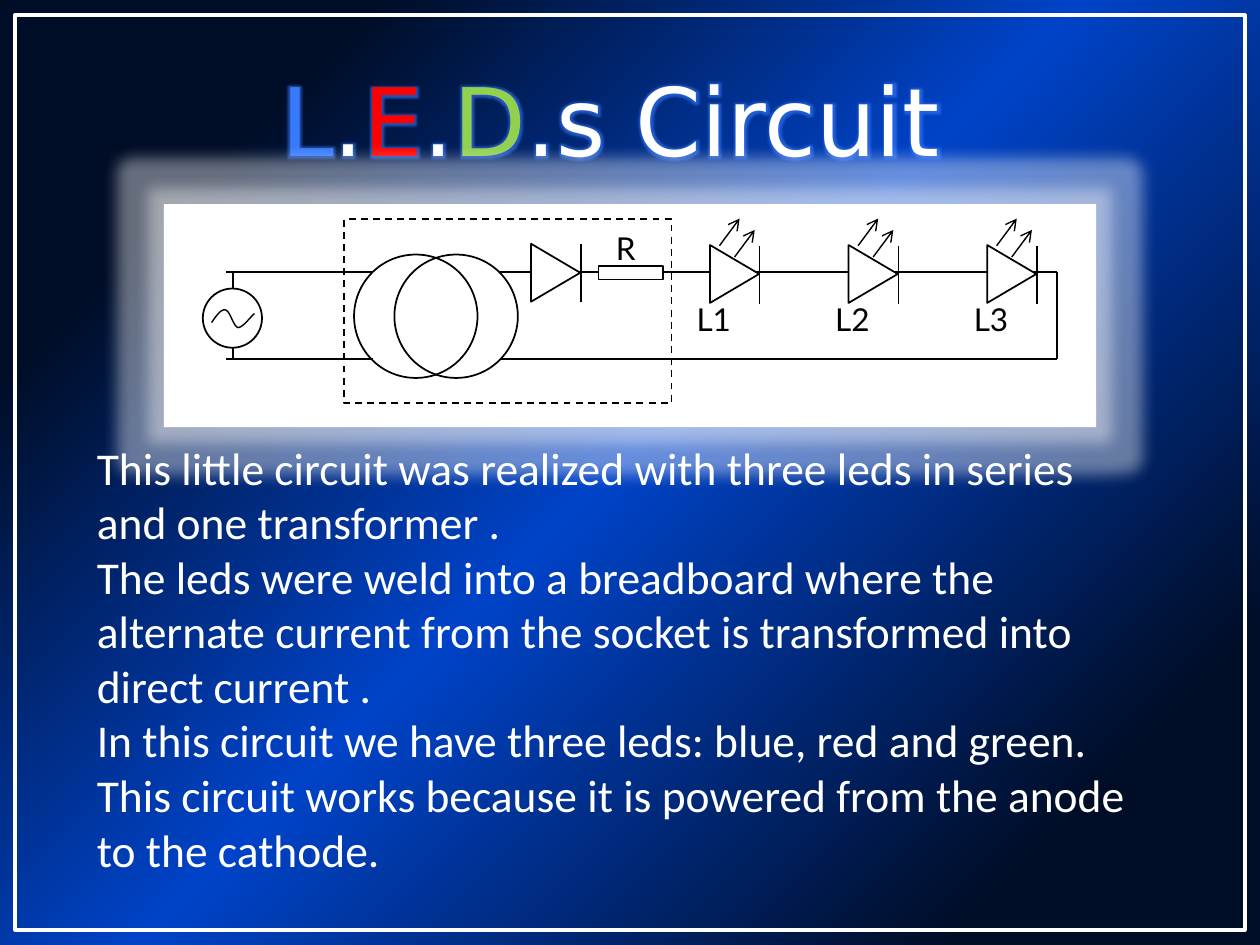
from lxml.etree import SubElement
from pptx import Presentation
from pptx.dml.color import RGBColor
from pptx.enum.dml import MSO_LINE
from pptx.enum.shapes import MSO_CONNECTOR, MSO_SHAPE
from pptx.enum.text import MSO_ANCHOR, MSO_AUTO_SIZE, PP_ALIGN
from pptx.oxml.ns import qn
from pptx.util import Inches, Pt

W, H = 10, 7.5
COLORS = {"white": "FFFFFF", "black": "000000", "blue": "377AFF", "red": "FF0000",
          "green": "92D050", "glow": "0A4DDB", "night": "000D26", "royal": "0043C8"}
THIN, MEDIUM = 0.8, 1


def rgb(name):
    return RGBColor.from_string(COLORS[name])


def add_color(parent, name, alpha=None):
    clr = SubElement(parent, qn("a:srgbClr"), val=COLORS[name])
    if alpha:
        SubElement(clr, qn("a:alpha"), val=str(alpha * 1000))


def add_glow(parent, name, radius, alpha):
    effects = parent.find(qn("a:effectLst"))
    if effects is None:
        effects = SubElement(parent, qn("a:effectLst"))
    add_color(SubElement(effects, qn("a:glow"), rad=str(Pt(radius))), name, alpha)
    return effects


def set_background(slide, stops, angle):
    fill = slide.background.fill
    fill.gradient()
    fill.gradient_angle = 360 - angle
    gs_lst = slide.element.find(".//" + qn("a:gsLst"))
    for gs in list(gs_lst):
        gs_lst.remove(gs)
    for pos, name in stops:
        add_color(SubElement(gs_lst, qn("a:gs"), pos=str(pos * 1000)), name)


def write(sp, paragraphs, size, font, align=PP_ALIGN.LEFT, glow=None):
    """Each paragraph is a list of (text, colour) runs."""
    tf = sp.text_frame
    tf.word_wrap = True
    tf.auto_size = MSO_AUTO_SIZE.NONE
    tf.vertical_anchor = MSO_ANCHOR.TOP
    for i, runs in enumerate(paragraphs):
        p = tf.add_paragraph() if i else tf.paragraphs[0]
        p.alignment = align
        for text, color in runs:
            r = p.add_run()
            r.text = text
            r.font.size = Pt(size)
            r.font.color.rgb = rgb(color)
            if glow:
                add_glow(r.font._element, glow, 5, 60)
            r.font.name = font


class Grid:
    """A box on the slide, split into equal square cells."""

    def __init__(self, slide, box, columns):
        self.shapes = slide.shapes
        self.x, self.y, self.w, self.h = box
        self.cell = self.w / columns

    def point(self, col, row):
        return Inches(self.x + col * self.cell), Inches(self.y + row * self.cell)

    def frame(self, col, row, cols, rows):
        return (*self.point(col, row), Inches(cols * self.cell), Inches(rows * self.cell))

    def shape(self, kind, col, row, cols, rows, fill="white", rotation=0):
        sp = self.shapes.add_shape(kind, *self.frame(col, row, cols, rows))
        style(sp, fill, "black", MEDIUM)
        sp.rotation = rotation
        return sp

    def wire(self, start, end, width=THIN, arrow=False):
        line = self.shapes.add_connector(
            MSO_CONNECTOR.STRAIGHT, *self.point(*start), *self.point(*end))
        line.line.color.rgb = rgb("black")
        line.line.width = Pt(width)
        if arrow:
            SubElement(line.line._get_or_add_ln(), qn("a:tailEnd"), type="arrow")
        SubElement(line._element.spPr, qn("a:effectLst"))

    def label(self, text, col, row, cols):
        sp = self.shapes.add_textbox(*self.frame(col, row, cols, 4))
        write(sp, [[(text, "black")]], 18, "Lato")


def style(sp, fill=None, line=None, width=MEDIUM):
    sp.shadow.inherit = False
    if fill:
        sp.fill.solid()
        sp.fill.fore_color.rgb = rgb(fill)
    else:
        sp.fill.background()
    if line:
        sp.line.color.rgb = rgb(line)
        sp.line.width = Pt(width)
    else:
        sp.line.fill.background()


def draw_diode(grid, col, row):
    grid.shape(MSO_SHAPE.ISOSCELES_TRIANGLE, col, row, 4.6, 3.9, rotation=90)
    grid.wire((col + 4.3, row + 4.3), (col + 4.3, row - 0.3))


def draw_led(grid, col, row, name):
    draw_diode(grid, col, row)
    for dx, dy in ((1.1, -0.3), (2.3, 0.6)):
        grid.wire((col + dx, row + dy), (col + dx + 1.6, row + dy - 2.15), arrow=True)
    grid.label(name, col - 1.7, row + 3.5, 5.1)


def draw_source(grid, col, row, size):
    """AC source: a circle with one sine-like wave inside."""
    grid.shape(MSO_SHAPE.OVAL, col, row, size, size)
    curves = [((0.7, 2.7), (1.1, 2.1), (1.5, 1.6), (1.8, 1.7)),
              ((1.8, 1.7), (2.2, 1.8), (2.4, 3.0), (2.8, 3.1)),
              ((2.8, 3.1), (3.2, 3.1), (3.9, 2.1), (4.1, 2.0))]
    steps = 12
    points = []
    for a, b, c, d in curves:
        for t in (i / steps for i in range(steps + 1)):
            x, y = ((1 - t) ** 3 * a[k] + 3 * t * (1 - t) ** 2 * b[k]
                    + 3 * t * t * (1 - t) * c[k] + t ** 3 * d[k] for k in (0, 1))
            points.append(grid.point(col + x, row + y))
    builder = grid.shapes.build_freeform(*points[0])
    builder.add_line_segments(points[1:], close=False)
    style(builder.convert_to_shape(), line="black", width=THIN)


def draw_circuit(slide, box):
    grid = Grid(slide, box, columns=74)
    top, bottom, right = 5.4, 12.3, 70.9

    # Glowing panel
    panel = slide.shapes.add_shape(MSO_SHAPE.RECTANGLE, *map(Inches, box))
    style(panel, "white")
    add_glow(panel._element.spPr, "white", 18, 40)

    # Transformer in its dashed housing
    housing = grid.shape(MSO_SHAPE.RECTANGLE, 14.3, 1.2, 26, 14.6)
    housing.line.dash_style = MSO_LINE.DASH
    for col, fill in ((15.1, "white"), (18.3, None)):
        grid.shape(MSO_SHAPE.OVAL, col, 4, 9.8, 9.8, fill)

    # Wires
    grid.wire((26.7, top), (right, top), MEDIUM)
    grid.wire((26.7, bottom), (right, bottom))
    grid.wire((right, top), (right, bottom))
    for row in (top, bottom):
        grid.wire((16.6, row), (4.9, row))
    grid.wire((5.5, bottom), (5.5, top))

    # Components
    draw_source(grid, 3.1, 6.7, 4.7)
    for i in range(3):
        draw_led(grid, 43 + 11 * i, 3.6, f"L{i + 1}")
    grid.shape(MSO_SHAPE.RECTANGLE, 34.5, 4.9, 5.1, 1.1)
    grid.label("R", 34.9, 1.5, 3.7)
    draw_diode(grid, 28.8, 3.5)


def draw_title(slide, box):
    title = slide.shapes.title
    title.left, title.top, title.width, title.height = map(Inches, box)
    runs = [("L", "blue"), (".", "white"), ("E", "red"), (".", "white"),
            ("D", "green"), (".s Circuit", "white")]
    write(title, [runs], 54, "DejaVu Sans", PP_ALIGN.CENTER, glow="blue")


def draw_body(slide, box):
    lines = [
        "This little circuit was realized with three leds in series and one transformer .",
        "The leds were weld into a breadboard where the alternate current from the socket "
        "is transformed into direct current .",
        "In this circuit we have three leds: blue, red and green.",
        "This circuit works because it is powered from the anode to the cathode.",
    ]
    sp = slide.shapes.add_textbox(*map(Inches, box))
    write(sp, [[(line, "white")] for line in lines], 26, "Calibri")


def draw_border(slide, box):
    sp = slide.shapes.add_shape(MSO_SHAPE.RECTANGLE, *map(Inches, box))
    style(sp, line="white", width=2)


def main():
    prs = Presentation()
    prs.slide_width, prs.slide_height = Inches(W), Inches(H)
    slide = prs.slides.add_slide(prs.slide_layouts[5])
    set_background(slide, [(17, "night"), (49, "royal"), (86, "night")], angle=45)
    draw_title(slide, (0.83, 0.44, 8.03, 1.01))
    draw_body(slide, (0.67, 3.44, 8.58, 3.6))
    margin = 0.12
    draw_border(slide, (margin, margin, W - 2 * margin, H - 2 * margin))
    draw_circuit(slide, (1.3, 1.62, 7.4, 1.77))
    prs.save("out.pptx")


if __name__ == "__main__":
    main()
